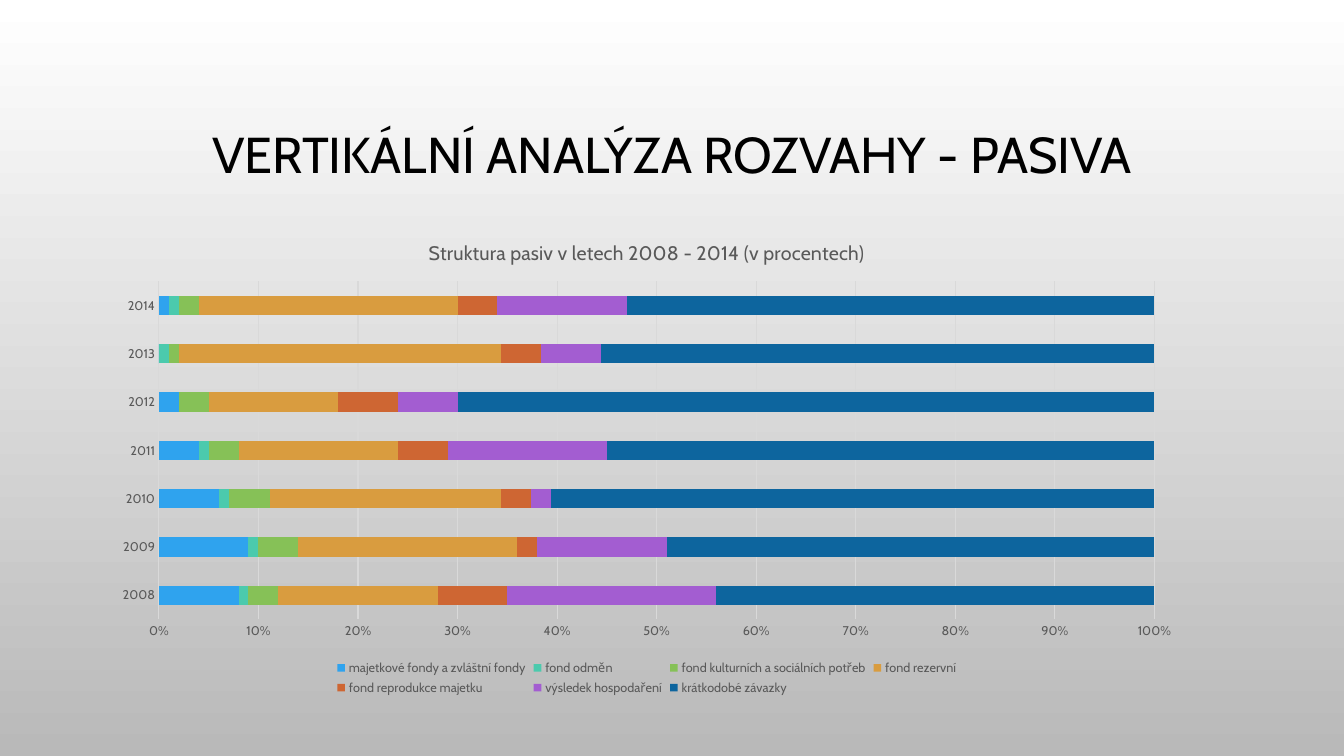
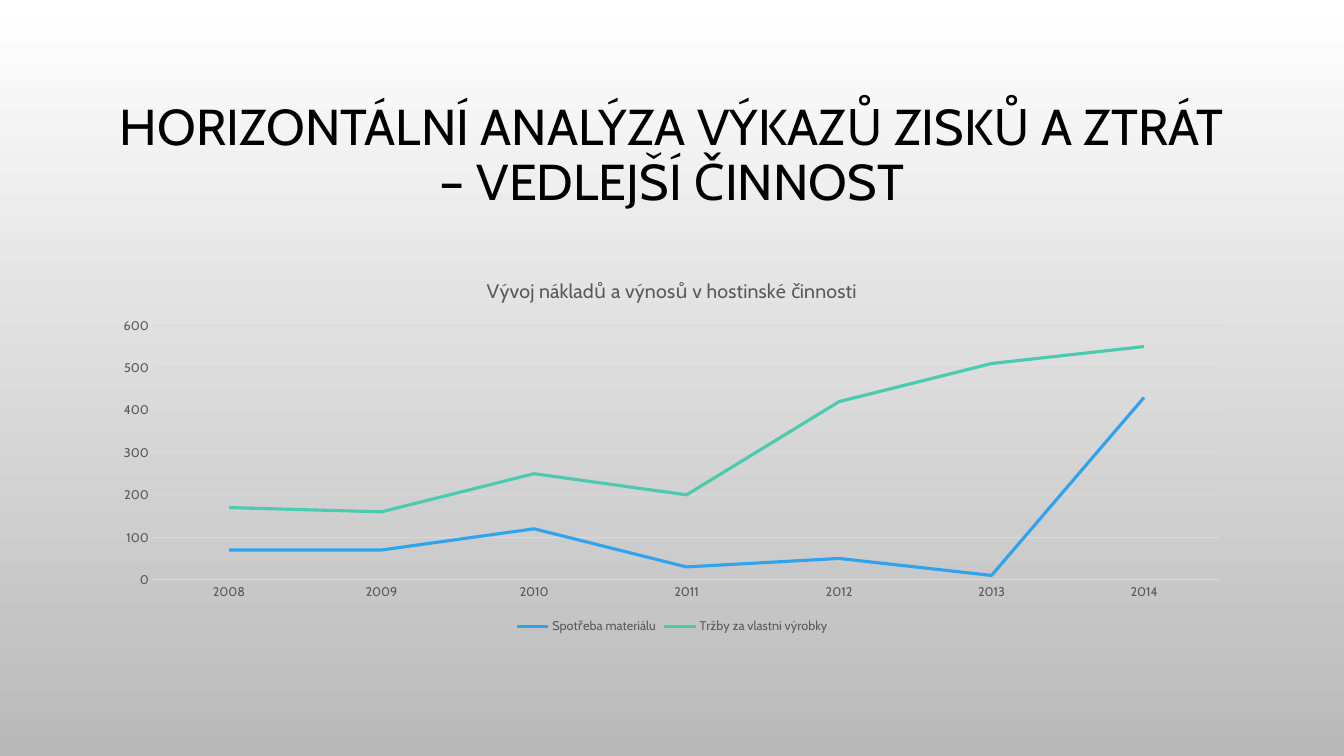
from pptx import Presentation
from pptx.chart.data import CategoryChartData
from pptx.dml.color import RGBColor
from pptx.enum.chart import XL_CHART_TYPE, XL_LEGEND_POSITION, XL_TICK_MARK
from pptx.enum.text import MSO_ANCHOR, PP_ALIGN
from pptx.util import Inches, Pt

FONT = "Cabin"
COLORS = {
    "top": "FFFFFF", "bottom": "B9B9B9", "title": "000000",
    "label": "595959", "grid": "D9D9D9",
    "blue": "2FA3EE", "teal": "4BCAAD", "green": "86C157", "amber": "D99C3F",
    "rust": "CE6633", "purple": "A35DD1", "navy": "0D659E",
}
SERIES_COLORS = ["blue", "teal", "green", "amber", "rust", "purple", "navy"]
YEARS = [str(year) for year in range(2008, 2015)]

LIABILITIES = {
    "majetkové fondy a zvláštní fondy": (8, 9, 6, 4, 2, 0, 1),
    "fond odměn": (1, 1, 1, 1, 0, 1, 1),
    "fond kulturních a sociálních potřeb": (3, 4, 4, 3, 3, 1, 2),
    "fond rezervní": (16, 22, 23, 16, 13, 32, 26),
    "fond reprodukce majetku": (7, 2, 3, 5, 6, 4, 4),
    "výsledek hospodaření": (21, 13, -2, 16, 6, -6, 13),
    "krátkodobé závazky": (44, 49, 60, 55, 70, 55, 53),
}
CATERING = {
    "Spotřeba materiálu": (70, 70, 120, 30, 50, 10, 430),
    "Tržby za vlastní výrobky": (170, 160, 250, 200, 420, 510, 550),
}


def rgb(name):
    return RGBColor.from_string(COLORS[name])


def style_font(font, size, color):
    font.name = FONT
    font.size = Pt(size)
    font.bold = False
    font.color.rgb = rgb(color)


def style_line(line, color, width):
    line.color.rgb = rgb(color)
    line.width = Pt(width)


def style_master(master):
    """Set the background and title box that every slide inherits."""
    fill = master.background.fill
    fill.gradient()
    fill.gradient_angle = 270
    for stop, position, color in zip(fill.gradient_stops, (0, 1), ("top", "bottom")):
        stop.position = position
        stop.color.rgb = rgb(color)
    title = master.placeholders[0]
    title.left, title.top = Inches(1), Inches(0.68)
    title.width, title.height = Inches(11.33), Inches(1.75)


def add_page(deck, text):
    page = deck.slides.add_slide(deck.slide_layouts.get_by_name("Title Only"))
    frame = page.shapes.title.text_frame
    frame.text = text
    frame.vertical_anchor = MSO_ANCHOR.MIDDLE
    paragraph = frame.paragraphs[0]
    paragraph.alignment = PP_ALIGN.CENTER
    paragraph.line_spacing = 0.9
    style_font(paragraph.runs[0].font, 36, "title")
    return page


def style_axes(chart, number_format):
    for axis in (chart.category_axis, chart.value_axis):
        axis.major_tick_mark = axis.minor_tick_mark = XL_TICK_MARK.NONE
        style_font(axis.tick_labels.font, 9, "label")
    style_line(chart.category_axis.format.line, "grid", 0.75)
    chart.value_axis.format.line.fill.background()
    chart.value_axis.has_major_gridlines = True
    style_line(chart.value_axis.major_gridlines.format.line, "grid", 0.75)
    labels = chart.value_axis.tick_labels
    labels.number_format = number_format
    labels.number_format_is_linked = False


def add_chart(page, kind, box, title, series, number_format):
    data = CategoryChartData()
    data.categories = YEARS
    for name, values in series.items():
        data.add_series(name, values)
    chart = page.shapes.add_chart(kind, *map(Inches, box), data).chart
    style_font(chart.font, 10, "title")

    chart.has_title = True
    chart.chart_title.include_in_layout = False
    chart.chart_title.text_frame.text = title
    style_font(chart.chart_title.text_frame.paragraphs[0].runs[0].font, 14, "label")

    chart.has_legend = True
    chart.legend.position = XL_LEGEND_POSITION.BOTTOM
    chart.legend.include_in_layout = False
    style_font(chart.legend.font, 9, "label")
    style_axes(chart, number_format)
    return chart


def add_stacked_bars(page, box, title, series):
    chart = add_chart(page, XL_CHART_TYPE.BAR_STACKED_100, box, title, series, "0%")
    plot = chart.plots[0]
    plot.vary_by_categories = False
    plot.gap_width = 150
    plot.overlap = 100
    for bars, color in zip(plot.series, SERIES_COLORS):
        bars.invert_if_negative = False
        bars.format.fill.solid()
        bars.format.fill.fore_color.rgb = rgb(color)


def add_lines(page, box, title, series):
    chart = add_chart(page, XL_CHART_TYPE.LINE, box, title, series, "General")
    plot = chart.plots[0]
    plot.vary_by_categories = False
    for curve, color in zip(plot.series, SERIES_COLORS):
        curve.smooth = False
        style_line(curve.format.line, color, 2.25)


def main():
    deck = Presentation()
    deck.slide_width, deck.slide_height = Inches(13.33), Inches(7.5)
    style_master(deck.slide_master)

    page = add_page(deck, "VERTIKÁLNÍ ANALÝZA ROZVAHY - PASIVA")
    add_stacked_bars(page, (1, 2.19, 10.83, 4.75),
                     "Struktura pasiv v letech 2008 - 2014 (v procentech)", LIABILITIES)

    page = add_page(deck, "HORIZONTÁLNÍ ANALÝZA VÝKAZŮ ZISKŮ A ZTRÁT – VEDLEJŠÍ ČINNOST")
    add_lines(page, (1, 2.59, 11.33, 3.74),
              "Vývoj nákladů a výnosů v hostinské činnosti", CATERING)

    deck.save("out.pptx")


if __name__ == "__main__":
    main()
